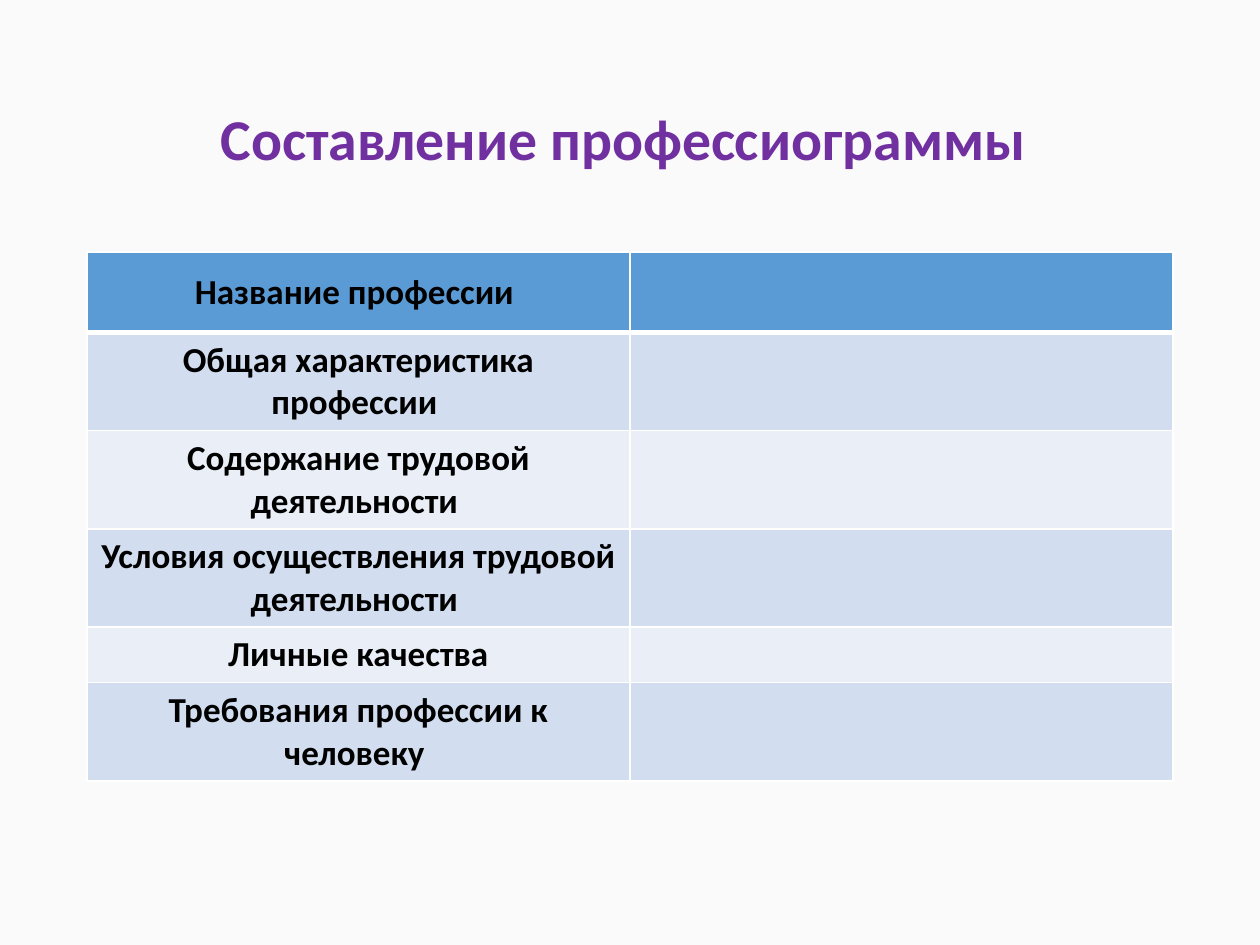
from lxml import etree
from pptx import Presentation
from pptx.dml.color import RGBColor
from pptx.enum import text
from pptx.oxml.ns import qn
from pptx.util import Cm, Pt

TITLE = "Составление профессиограммы "
# (label, row height in cm)
ROWS = [
    ("Название профессии ", 1.62),
    ("Общая характеристика профессии ", 1.98),
    ("Содержание трудовой деятельности ", 1.98),
    ("Условия осуществления трудовой деятельности ", 1.98),
    ("Личные качества", 1.12),
    ("Требования профессии к человеку ", 1.98),
]
COLORS = {
    "background": "FAFAFA",
    "title": "7030A0",
    "label": "000000",
    "header": "5B9BD5",
    "odd": "D2DEEF",
    "even": "EAEFF7",
    "border": "FFFFFF",
}
LEFT, WIDTH = 1.75, 21.9
TITLE_TOP, TITLE_HEIGHT = 1.02, 3.68
TABLE_TOP = 5.08
COLUMNS = 2


def color(name):
    return RGBColor.from_string(COLORS[name])


def style_paragraph(paragraph, size, color_name):
    paragraph.alignment = text.PP_ALIGN.CENTER
    font = paragraph.font
    font.name, font.size, font.bold = "Calibri", Pt(size), True
    font.color.rgb = color(color_name)


def set_borders(cell, top, bottom):
    """Draw all four cell borders; top and bottom widths are in points."""
    properties = cell._tc.get_or_add_tcPr()
    widths = {"a:lnL": 1, "a:lnR": 1, "a:lnT": top, "a:lnB": bottom}
    for position, (tag, width) in enumerate(widths.items()):
        line = etree.Element(qn(tag), w=str(Pt(width)))
        fill = etree.SubElement(line, qn("a:solidFill"))
        etree.SubElement(fill, qn("a:srgbClr"), val=COLORS["border"])
        properties.insert(position, line)


def add_title(slide):
    box = slide.shapes.add_textbox(
        Cm(LEFT), Cm(TITLE_TOP), Cm(WIDTH), Cm(TITLE_HEIGHT))
    frame = box.text_frame
    frame.word_wrap = True
    frame.vertical_anchor = text.MSO_ANCHOR.MIDDLE
    heading = frame.paragraphs[0]
    heading.text = TITLE
    heading.line_spacing = 0.9
    style_paragraph(heading, 33, "title")


def add_profile_table(slide):
    total_height = sum(height for _, height in ROWS)
    table = slide.shapes.add_table(
        len(ROWS), COLUMNS, Cm(LEFT), Cm(TABLE_TOP), Cm(WIDTH), Cm(total_height)).table
    for column in table.columns:
        column.width = Cm(WIDTH / COLUMNS)
    for index, (label, height) in enumerate(ROWS):
        row = table.rows[index]
        row.height = Cm(height)
        band = "header" if index == 0 else "odd" if index % 2 else "even"
        for cell in row.cells:
            cell.vertical_anchor = text.MSO_ANCHOR.MIDDLE
            cell.fill.solid()
            cell.fill.fore_color.rgb = color(band)
            set_borders(cell, 3 if index == 1 else 1, 3 if index == 0 else 1)
        label_paragraph = row.cells[0].text_frame.paragraphs[0]
        label_paragraph.text = label
        style_paragraph(label_paragraph, 20, "label")


def main():
    deck = Presentation()
    deck.slide_width, deck.slide_height = Cm(25.4), Cm(19.05)
    slide = deck.slides.add_slide(deck.slide_layouts[6])
    slide.background.fill.solid()
    slide.background.fill.fore_color.rgb = color("background")
    add_title(slide)
    add_profile_table(slide)
    deck.save("out.pptx")


if __name__ == "__main__":
    main()
